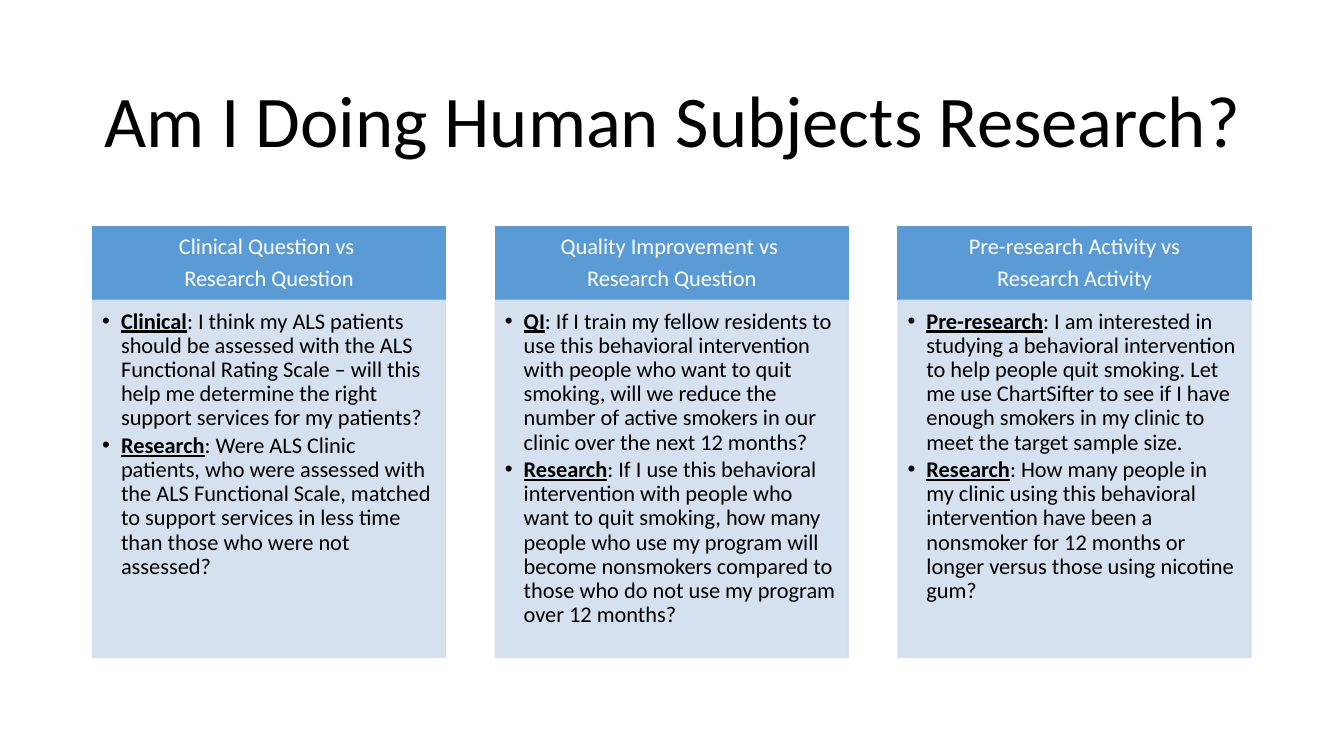
import pptx
import pptx.dml.color
import pptx.enum.shapes
import pptx.enum.text
import pptx.oxml
import pptx.oxml.ns
import pptx.util
from pptx.util import Pt

BLUE = pptx.dml.color.RGBColor(0x5B, 0x9B, 0xD5)
PALE_BLUE = pptx.dml.color.RGBColor(0xD2, 0xDE, 0xEF)
BLACK = pptx.dml.color.RGBColor(0, 0, 0)
WHITE = pptx.dml.color.RGBColor(0xFF, 0xFF, 0xFF)
CENTER = pptx.enum.text.PP_ALIGN.CENTER
LEFT = pptx.enum.text.PP_ALIGN.LEFT
MIDDLE = pptx.enum.text.MSO_ANCHOR.MIDDLE
TOP = pptx.enum.text.MSO_ANCHOR.TOP

COLUMN_LEFT, COLUMN_PITCH, COLUMN_WIDTH = 66.24, 287.64, 252
HEADER_TOP, HEADER_HEIGHT, BODY_HEIGHT = 162, 52.6, 255

COLUMNS = [
    (["Clinical Question vs ", "Research Question"],
     [("Clinical", ": I think my ALS patients should be assessed with the ALS Functional "
       "Rating Scale – will this help me determine the right support services for my patients?"),
      ("Research", ": Were ALS Clinic patients, who were assessed with the ALS Functional "
       "Scale, matched to support services in less time than those who were not assessed?")]),
    (["Quality Improvement vs ", "Research Question"],
     [("QI", ": If I train my fellow residents to use this behavioral intervention with people "
       "who want to quit smoking, will we reduce the number of active smokers in our clinic "
       "over the next 12 months?"),
      ("Research", ": If I use this behavioral intervention with people who want to quit "
       "smoking, how many people who use my program will become nonsmokers compared to those "
       "who do not use my program over 12 months?")]),
    (["Pre-research Activity vs", "Research Activity"],
     [("Pre-research", ": I am interested in studying a behavioral intervention to help people "
       "quit smoking. Let me use ChartSifter to see if I have enough smokers in my clinic to "
       "meet the target sample size."),
      ("Research", ": How many people in my clinic using this behavioral intervention have been "
       "a nonsmoker for 12 months or longer versus those using nicotine gum?")]),
]


def add_panel(left, top, height, color, anchor, margins):
    panel = slide.shapes.add_shape(pptx.enum.shapes.MSO_SHAPE.RECTANGLE,
                                   Pt(left), Pt(top), Pt(COLUMN_WIDTH), Pt(height))
    panel.shadow.inherit = False
    panel.fill.solid()
    panel.fill.fore_color.rgb = color
    panel.line.color.rgb = color
    panel.line.width = Pt(1)
    frame = panel.text_frame
    frame.word_wrap = True
    frame.vertical_anchor = anchor
    (frame.margin_left, frame.margin_top,
     frame.margin_right, frame.margin_bottom) = [Pt(m) for m in margins]
    return panel


def format_paragraph(paragraph, size, color, alignment, space_after=0):
    paragraph.alignment = alignment
    paragraph.line_spacing = 0.9
    paragraph.space_after = Pt(space_after)
    for run in paragraph.runs:
        run.font.name = "Calibri"
        run.font.size = Pt(size)
        run.font.color.rgb = color


presentation = pptx.Presentation()
presentation.slide_width, presentation.slide_height = Pt(960), Pt(540)
slide = presentation.slides.add_slide(presentation.slide_layouts[6])

# Title
title = slide.shapes.add_textbox(Pt(66.24), Pt(43.92), Pt(828), Pt(89.28)).text_frame
title.word_wrap = True
title.vertical_anchor = MIDDLE
title.text = "Am I Doing Human Subjects Research?"
format_paragraph(title.paragraphs[0], 52, BLACK, CENTER)

for index, (heading, questions) in enumerate(COLUMNS):
    left = COLUMN_LEFT + index * COLUMN_PITCH

    # Column heading
    header = add_panel(left, HEADER_TOP, HEADER_HEIGHT, BLUE, MIDDLE, (9, 5.1, 9, 5.1))
    header.text_frame.text = "\n".join(heading)
    for paragraph in header.text_frame.paragraphs:
        format_paragraph(paragraph, 16, WHITE, CENTER, 5.6)

    # Column body, slightly transparent
    body = add_panel(left, HEADER_TOP + HEADER_HEIGHT, BODY_HEIGHT, PALE_BLUE, TOP,
                     (6.75, 6.75, 9, 10.1))
    for color_element in body._element.spPr.iter(pptx.oxml.ns.qn("a:srgbClr")):
        alpha = pptx.oxml.parse_xml(
            f'<a:alpha {pptx.oxml.ns.nsdecls("a")} val="90000"/>')
        color_element.append(alpha)

    # Bulleted questions with underlined labels
    for number, (label, question) in enumerate(questions):
        frame = body.text_frame
        paragraph = frame.add_paragraph() if number else frame.paragraphs[0]
        label_run, question_run = paragraph.add_run(), paragraph.add_run()
        label_run.text, question_run.text = label, question
        label_run.font.bold = label_run.font.underline = True
        format_paragraph(paragraph, 16, BLACK, LEFT, 2.4)
        properties = paragraph._p.get_or_add_pPr()
        properties.set("marL", str(Pt(13.5)))
        properties.set("indent", str(-Pt(13.5)))
        properties.append(pptx.oxml.parse_xml(
            f'<a:buFont {pptx.oxml.ns.nsdecls("a")} typeface="Arial"/>'))
        properties.append(pptx.oxml.parse_xml(
            f'<a:buChar {pptx.oxml.ns.nsdecls("a")} char="•"/>'))

presentation.save("out.pptx")
